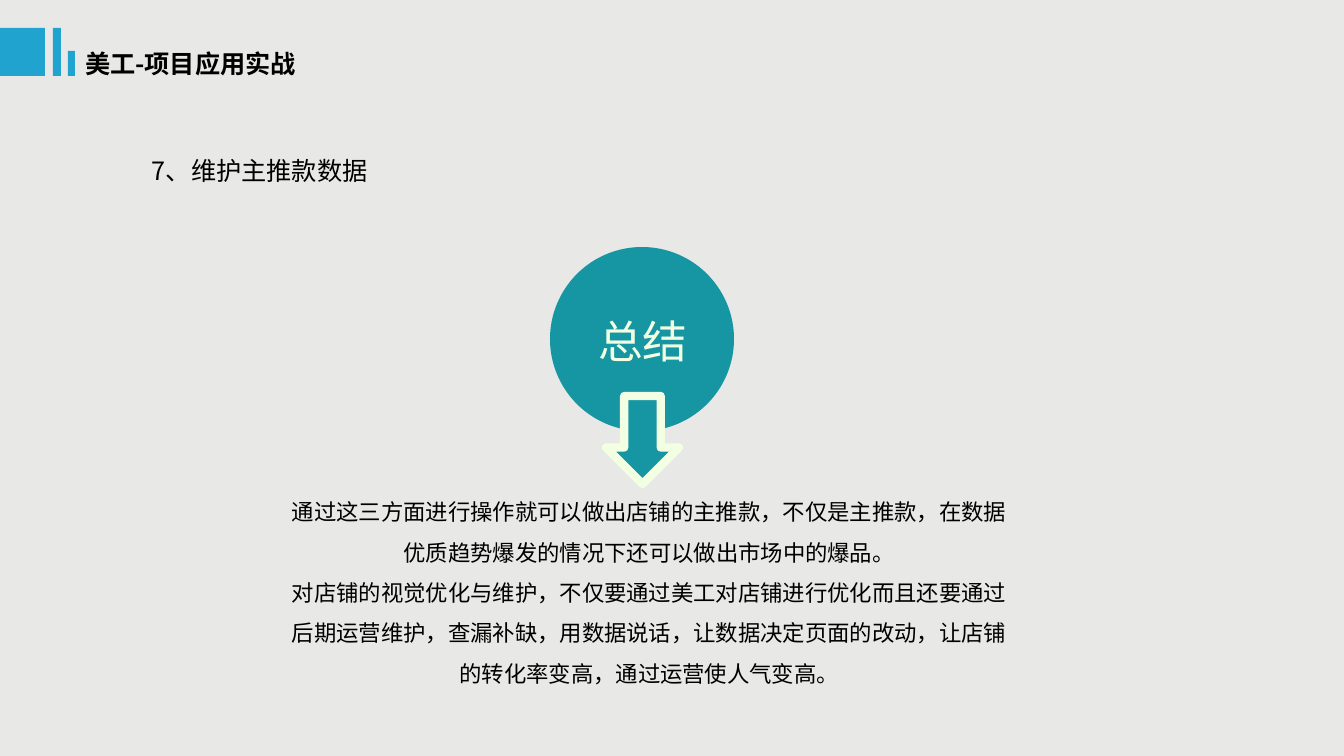
from lxml import etree
from pptx import Presentation
from pptx import util as u
from pptx.dml.color import RGBColor
from pptx.enum import shapes, text
from pptx.oxml.ns import qn

PX = 914400 / 100.8
FONT = "Noto Sans CJK SC"
BACKGROUND = RGBColor(0xE8, 0xE8, 0xE6)
BLUE = RGBColor(0x21, 0xA3, 0xD0)
TEAL = RGBColor(0x16, 0x95, 0xA3)
CREAM = RGBColor(0xF3, 0xFF, 0xE2)
BLACK = RGBColor(0, 0, 0)

HEADER_BARS = [(0, 28, 45, 48), (53, 28, 8, 48), (68, 51, 7, 25)]
CIRCLE = (550, 247, 184, 184)
ARROW = (606, 396, 73, 88)

LEFT, CENTER = text.PP_ALIGN.LEFT, text.PP_ALIGN.CENTER
# Line heights are in points.
TEXTS = [
    dict(box=(75, 43, 273, 40), inset=(10, 5), align=LEFT, line=21.6,
         font=dict(size=u.Pt(18), bold=True), color=BLACK,
         lines=["美工-项目应用实战"]),
    dict(box=(142, 150, 280, 40), inset=(10, 5), align=LEFT, line=21.6,
         font=dict(size=u.Pt(18)), color=BLACK,
         lines=["7、维护主推款数据"]),
    dict(box=(558, 314, 170, 93), inset=(0, 0), align=CENTER, line=38.4,
         font=dict(size=u.Pt(32)), color=CREAM,
         lines=["总结"]),
    dict(box=(288, 485, 723, 162), inset=(0, 0), align=CENTER, line=28.8,
         font=dict(size=u.Pt(16)), color=BLACK,
         lines=["通过这三方面进行操作就可以做出店铺的主推款，不仅是主推款，"
                "在数据优质趋势爆发的情况下还可以做出市场中的爆品。",
                "对店铺的视觉优化与维护，不仅要通过美工对店铺进行优化而且还要通过"
                "后期运营维护，查漏补缺，用数据说话，让数据决定页面的改动，"
                "让店铺的转化率变高，通过运营使人气变高。"]),
]


def emu(*lengths):
    return [round(n * PX) for n in lengths]


def add_figure(slide, kind, box, fill, line=None):
    sp = slide.shapes.add_shape(kind, *emu(*box))
    sp.shadow.inherit = False
    sp.fill.solid()
    sp.fill.fore_color.rgb = fill
    if line is None:
        sp.line.fill.background()
    else:
        sp.line.color.rgb = line
        sp.line.width = u.Pt(6)


def add_text(slide, box, inset, align, line, font, color, lines):
    tf = slide.shapes.add_textbox(*emu(*box)).text_frame
    side, top = emu(*inset)
    frame = dict(word_wrap=True, margin_left=side, margin_right=side,
                 margin_top=top, margin_bottom=top)
    for name, value in frame.items():
        setattr(tf, name, value)
    for i, words in enumerate(lines):
        p = tf.paragraphs[0] if i == 0 else tf.add_paragraph()
        p.alignment = align
        p.line_spacing = u.Pt(line)
        r = p.add_run()
        r.text = words
        for name, value in dict(font, name=FONT).items():
            setattr(r.font, name, value)
        r.font.color.rgb = color
        etree.SubElement(r.font._element, qn("a:ea"), typeface=FONT)


def main():
    prs = Presentation()
    prs.slide_width, prs.slide_height = emu(1344, 756)
    slide = prs.slides.add_slide(prs.slide_layouts[6])
    slide.background.fill.solid()
    slide.background.fill.fore_color.rgb = BACKGROUND

    kinds = shapes.MSO_SHAPE
    for bar in HEADER_BARS:
        add_figure(slide, kinds.RECTANGLE, bar, BLUE)
    add_figure(slide, kinds.OVAL, CIRCLE, TEAL)
    add_figure(slide, kinds.DOWN_ARROW, ARROW, TEAL, CREAM)
    for item in TEXTS:
        add_text(slide, **item)
    prs.save("out.pptx")


if __name__ == "__main__":
    main()
